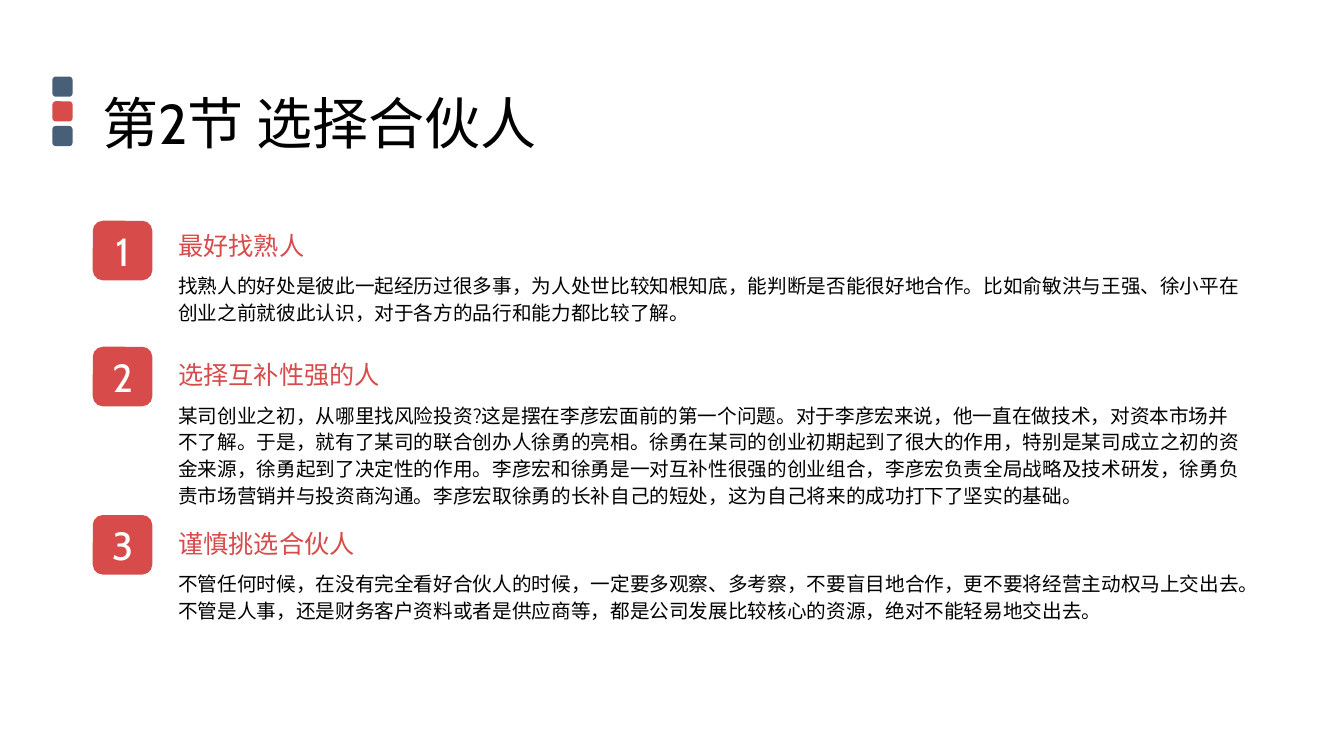
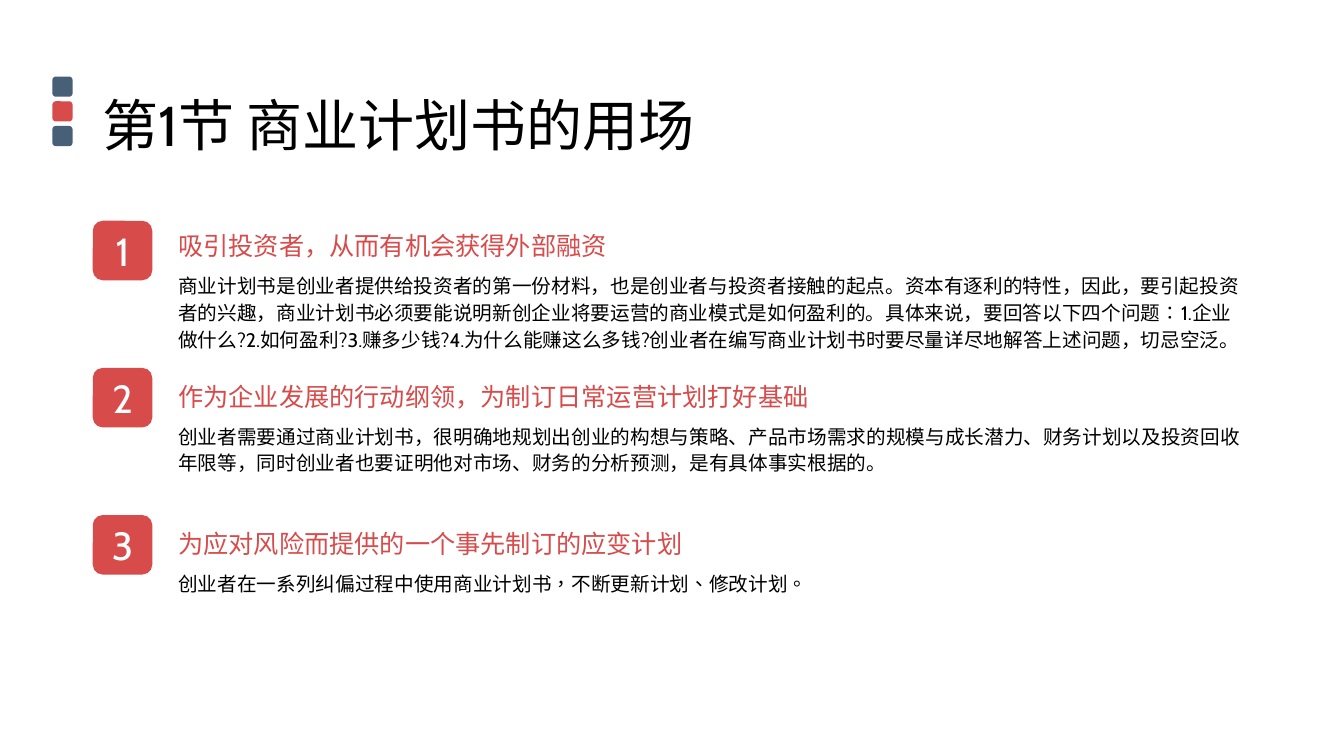
from math import ceil

from pptx import Presentation
from pptx.dml.color import RGBColor
from pptx.enum.lang import MSO_LANGUAGE_ID
from pptx.enum.shapes import MSO_SHAPE
from pptx.enum.text import MSO_ANCHOR, MSO_AUTO_SIZE, PP_ALIGN
from pptx.util import Inches, Pt

ROUNDED = MSO_SHAPE.ROUNDED_RECTANGLE
CENTER = PP_ALIGN.CENTER
MIDDLE, TOP = MSO_ANCHOR.MIDDLE, MSO_ANCHOR.TOP
FIT_SHAPE, NO_FIT = MSO_AUTO_SIZE.SHAPE_TO_FIT_TEXT, MSO_AUTO_SIZE.NONE
SIMPLIFIED = MSO_LANGUAGE_ID.SIMPLIFIED_CHINESE
TRADITIONAL = MSO_LANGUAGE_ID.TRADITIONAL_CHINESE

RED = RGBColor(0xD7, 0x4B, 0x4B)
SLATE = RGBColor(0x47, 0x5F, 0x77)
BLACK = RGBColor(0, 0, 0)
WHITE = RGBColor(255, 255, 255)
FONT = "Cabin"

# Shared grid, in inches
SLIDE_WIDTH, SLIDE_HEIGHT = 13.33, 7.5
MARGIN, CONTENT_WIDTH = 0.92, 11.5
BADGE = 0.59
TEXT_INDENT = 0.75
BODY_WIDTH = CONTENT_WIDTH - TEXT_INDENT
HEADING_HEIGHT = 0.4
INSETS = 0.2
HEADING_CHARACTER = 0.25
BODY_LINE, CHARACTERS_PER_LINE = 0.27, 54

# Each item: badge top, heading top, heading, body, language
SLIDES = [
    ("第2节 选择合伙人", 0.66, [
        (2.19, 2.24, "最好找熟人",
         "找熟人的好处是彼此一起经历过很多事，为人处世比较知根知底，能判断是否能很好地合作。"
         "比如俞敏洪与王强、徐小平在创业之前就彼此认识，对于各方的品行和能力都比较了解。",
         SIMPLIFIED),
        (3.44, 3.52, "选择互补性强的人",
         "某司创业之初，从哪里找风险投资?这是摆在李彦宏面前的第一个问题。对于李彦宏来说，"
         "他一直在做技术，对资本市场并不了解。于是，就有了某司的联合创办人徐勇的亮相。"
         "徐勇在某司的创业初期起到了很大的作用，特别是某司成立之初的资金来源，"
         "徐勇起到了决定性的作用。李彦宏和徐勇是一对互补性很强的创业组合，"
         "李彦宏负责全局战略及技术研发，徐勇负责市场营销并与投资商沟通。"
         "李彦宏取徐勇的长补自己的短处，这为自己将来的成功打下了坚实的基础。",
         SIMPLIFIED),
        (5.11, 5.19, "谨慎挑选合伙人",
         "不管任何时候，在没有完全看好合伙人的时候，一定要多观察、多考察，不要盲目地合作，"
         "更不要将经营主动权马上交出去。不管是人事，还是财务客户资料或者是供应商等，"
         "都是公司发展比较核心的资源，绝对不能轻易地交出去。",
         SIMPLIFIED),
    ]),
    ("第1节 商业计划书的用场", 0.68, [
        (2.19, 2.24, "吸引投资者，从而有机会获得外部融资",
         "商业计划书是创业者提供给投资者的第一份材料，也是创业者与投资者接触的起点。"
         "资本有逐利的特性，因此，要引起投资者的兴趣，"
         "商业计划书必须要能说明新创企业将要运营的商业模式是如何盈利的。"
         "具体来说，要回答以下四个问题∶1.企业做什么?2.如何盈利?3.赚多少钱?"
         "4.为什么能赚这么多钱?创业者在编写商业计划书时要尽量详尽地解答上述问题，切忌空泛。",
         SIMPLIFIED),
        (3.65, 3.73, "作为企业发展的行动纲领，为制订日常运营计划打好基础",
         "创业者需要通过商业计划书，很明确地规划出创业的构想与策略、"
         "产品市场需求的规模与成长潜力、财务计划以及投资回收年限等，"
         "同时创业者也要证明他对市场、财务的分析预测，是有具体事实根据的。",
         SIMPLIFIED),
        (5.11, 5.19, "为应对风险而提供的一个事先制订的应变计划",
         "创业者在一系列纠偏过程中使用商业计划书，不断更新计划、修改计划。",
         TRADITIONAL),
    ]),
]


def write(shape, text, size, color, language=SIMPLIFIED):
    """Put one styled paragraph in a shape and return it."""
    paragraph = shape.text_frame.paragraphs[0]
    run = paragraph.add_run()
    run.text = text
    run.font.language_id = language
    font = paragraph.font
    font.name, font.size, font.color.rgb = FONT, Pt(size), color
    return paragraph


def add_text(slide, box, text, size, color, language=SIMPLIFIED,
             wrap=True, fit=FIT_SHAPE, anchor=TOP):
    shape = slide.shapes.add_textbox(*map(Inches, box))
    frame = shape.text_frame
    frame.word_wrap, frame.auto_size, frame.vertical_anchor = wrap, fit, anchor
    return write(shape, text, size, color, language)


def add_square(shapes, left, top, side, color):
    square = shapes.add_shape(ROUNDED, *map(Inches, (left, top, side, side)))
    square.shadow.inherit = False
    square.fill.solid()
    square.fill.fore_color.rgb = color
    square.line.fill.background()
    return square


def add_marker(slide, left, top, height, side):
    """Column of three small squares beside the title."""
    group = slide.shapes.add_group_shape()
    pitch = (height - side) / 2
    for row, color in enumerate((SLATE, RED, SLATE)):
        add_square(group.shapes, left, top + row * pitch, side, color)


def add_title(slide, text, top):
    box = (MARGIN, top, CONTENT_WIDTH, 1.18)
    paragraph = add_text(slide, box, text, 40, BLACK, fit=NO_FIT, anchor=MIDDLE)
    paragraph.line_spacing = 0.9


def add_item(slide, number, badge_top, heading_top, heading, body, language):
    """Numbered badge with a heading and its paragraph to the right."""
    badge = add_square(slide.shapes, MARGIN, badge_top, BADGE, RED)
    badge.text_frame.vertical_anchor = MIDDLE
    write(badge, str(number), 28, WHITE).alignment = CENTER

    left = MARGIN + TEXT_INDENT
    heading_width = INSETS + HEADING_CHARACTER * len(heading)
    add_text(slide, (left, heading_top, heading_width, HEADING_HEIGHT),
             heading, 18, RED, wrap=False)

    body_height = INSETS / 2 + BODY_LINE * ceil(len(body) / CHARACTERS_PER_LINE)
    paragraph = add_text(
        slide, (left, heading_top + HEADING_HEIGHT, BODY_WIDTH, body_height),
        body, 14, BLACK, language)
    paragraph.line_spacing = 1.14
    paragraph.space_after = Pt(10)


def add_section_slide(presentation, title, title_top, items):
    slide = presentation.slides.add_slide(presentation.slide_layouts[6])
    add_marker(slide, 0.52, 0.76, 0.69, 0.2)
    add_title(slide, title, title_top)
    for number, item in enumerate(items, start=1):
        add_item(slide, number, *item)


def main():
    presentation = Presentation()
    presentation.slide_width = Inches(SLIDE_WIDTH)
    presentation.slide_height = Inches(SLIDE_HEIGHT)
    for section in SLIDES:
        add_section_slide(presentation, *section)
    presentation.save("out.pptx")


if __name__ == "__main__":
    main()
